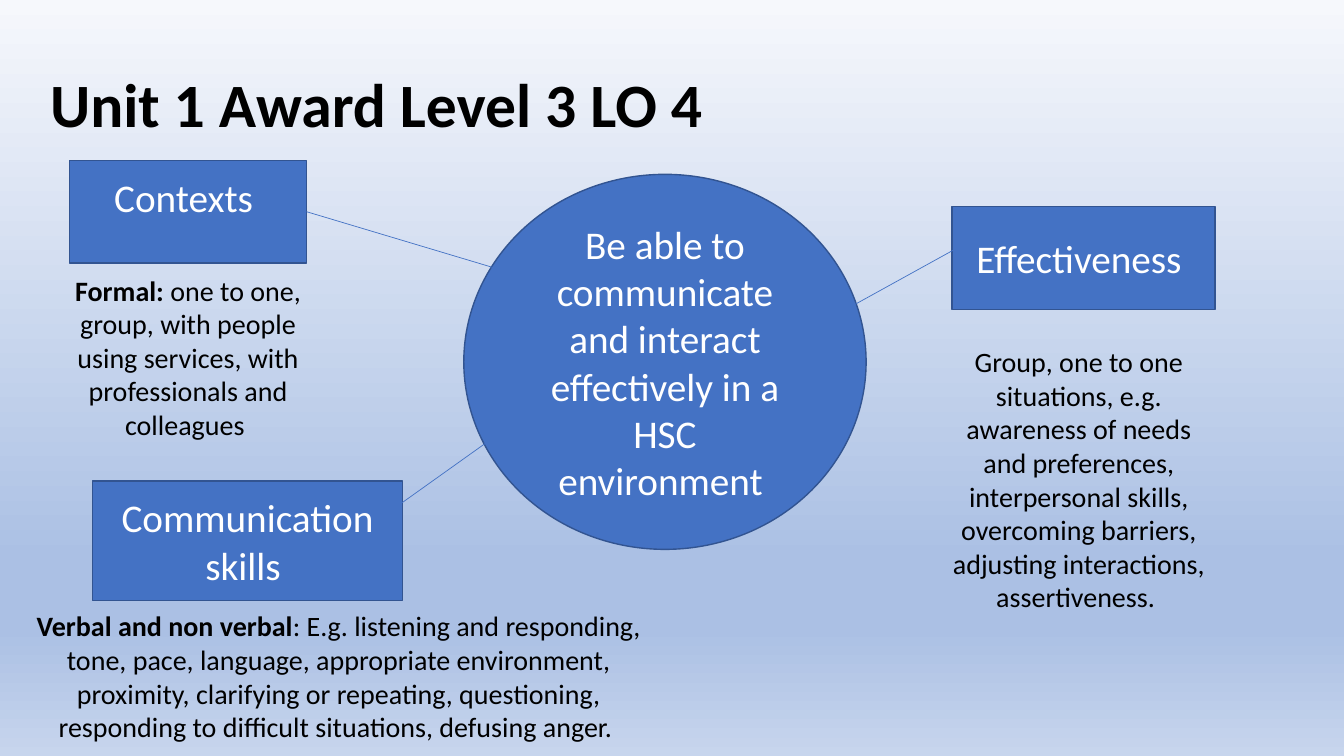
from copy import deepcopy

from pptx import Presentation
from pptx.dml.color import RGBColor
from pptx.enum.shapes import MSO_CONNECTOR, MSO_SHAPE
from pptx.enum.text import MSO_ANCHOR, PP_ALIGN
from pptx.oxml.ns import qn
from pptx.oxml.xmlchemy import OxmlElement
from pptx.util import Inches, Pt

RECT, OVAL = MSO_SHAPE.RECTANGLE, MSO_SHAPE.OVAL
STRAIGHT = MSO_CONNECTOR.STRAIGHT
MIDDLE, TOP = MSO_ANCHOR.MIDDLE, MSO_ANCHOR.TOP
LEFT, CENTER = PP_ALIGN.LEFT, PP_ALIGN.CENTER

BLUE = RGBColor(0x44, 0x72, 0xC4)
DARK_BLUE = RGBColor(0x32, 0x54, 0x91)
WHITE = RGBColor(0xFF, 0xFF, 0xFF)
BLACK = RGBColor(0x00, 0x00, 0x00)
PALE = RGBColor(0xF6, 0xF8, 0xFC)
MID = RGBColor(0xAB, 0xC0, 0xE4)
LIGHT = RGBColor(0xC7, 0xD5, 0xED)


def write(sp, runs, size, color, align=CENTER, anchor=MIDDLE):
    """Fill a shape with one paragraph of (text, bold) runs."""
    tf = sp.text_frame
    tf.word_wrap = True
    tf.vertical_anchor = anchor
    p = tf.paragraphs[0]
    p.alignment = align
    p.font.name = "Calibri"
    p.font.size = Pt(size)
    p.font.color.rgb = color
    for text, bold in runs:
        r = p.add_run()
        r.text = text
        r.font.bold = bold
    return tf


prs = Presentation()
prs.slide_width, prs.slide_height = Inches(13.33), Inches(7.5)
s = prs.slides.add_slide(prs.slide_layouts[6])

# Background gradient
fill = s.background.fill
fill.gradient()
fill.gradient_angle = 270
stop_list = s.element.find(".//" + qn("a:gsLst"))
for _ in range(2):
    stop_list.append(deepcopy(stop_list[0]))
stops = [(0, PALE), (0.74, MID), (0.83, MID), (1, LIGHT)]
for stop, (position, color) in zip(fill.gradient_stops, stops):
    stop.position = position
    stop.color.rgb = color

# Title
title = s.shapes.add_textbox(Inches(0.4), Inches(0.34), Inches(11.5), Inches(1.45))
tf = write(title, [("Unit 1 Award Level 3 LO 4", True)], 44, BLACK, LEFT)
tf.paragraphs[0].line_spacing = 0.9

# Central topic and its headings; the last number is the bottom inset
topics = [
    (OVAL, 4.6, 1.73, 3.99, 3.72,
     "Be able to communicate and interact effectively in a HSC environment ", 0.05),
    (RECT, 0.69, 1.59, 2.35, 1.02, "Contexts ", 0.35),
    (RECT, 9.44, 2.05, 2.61, 1.02, "Effectiveness ", 0.05),
    (RECT, 0.92, 4.77, 3.07, 1.19, "Communication skills ", 0.05),
]
for kind, x, y, w, h, text, inset in topics:
    sp = s.shapes.add_shape(kind, Inches(x), Inches(y), Inches(w), Inches(h))
    sp.shadow.inherit = False
    sp.fill.solid()
    sp.fill.fore_color.rgb = BLUE
    sp.line.color.rgb = DARK_BLUE
    sp.line.width = Pt(1)
    tf = write(sp, [(text, False)], 28, WHITE)
    tf.margin_bottom = Inches(inset)

# Details under each heading
details = [
    (0.37, 2.66, 2.99, 1.78, [
        ("Formal: ", True),
        ("one to one, group, with people using services, with professionals "
         "and colleagues ", False)]),
    (9.33, 3.37, 2.74, 2.79, [
        ("Group, one to one situations, e.g. awareness of needs and preferences, "
         "interpersonal skills, overcoming barriers, adjusting interactions, "
         "assertiveness. ", False)]),
    (0.19, 5.99, 6.34, 1.45, [
        ("Verbal and non verbal", True),
        (": E.g. listening and responding, tone, pace, language, appropriate "
         "environment, proximity, clarifying or repeating, questioning, responding "
         "to difficult situations, defusing anger. ", False)]),
]
for x, y, w, h, runs in details:
    box = s.shapes.add_textbox(Inches(x), Inches(y), Inches(w), Inches(h))
    write(box, runs, 20, BLACK, anchor=TOP)

# Lines from the central topic to the headings
links = [(4.91, 2.66, 3.04, 2.1), (8.19, 3.18, 9.73, 2.33), (4.91, 4.33, 3.76, 5.15)]
for x1, y1, x2, y2 in links:
    link = s.shapes.add_connector(STRAIGHT, Inches(x1), Inches(y1), Inches(x2), Inches(y2))
    link.line.color.rgb = BLUE
    link.line.width = Pt(0.5)
    link.element.spPr.append(OxmlElement("a:effectLst"))

prs.save("out.pptx")
